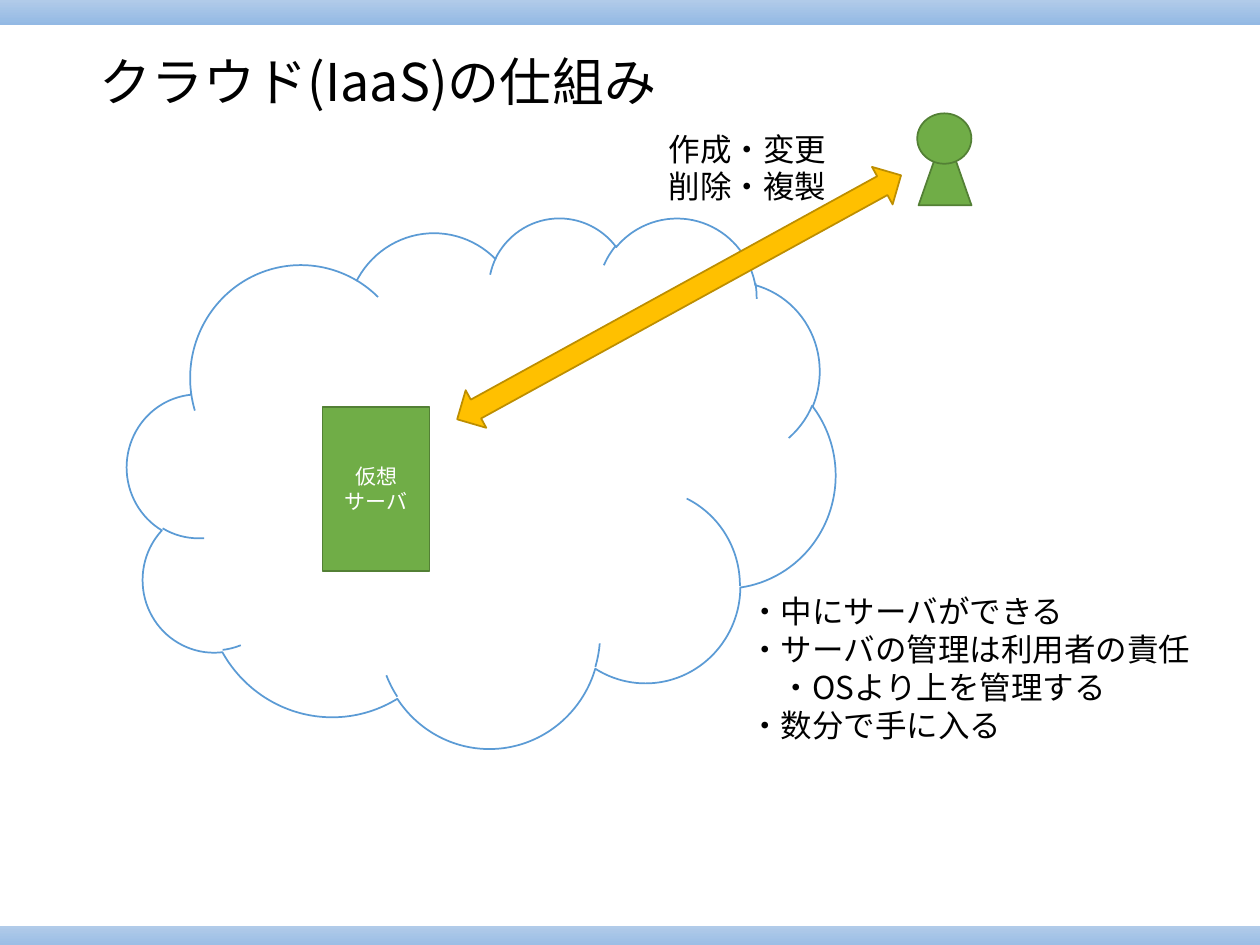
from lxml.etree import SubElement
from pptx import Presentation
from pptx.dml.color import RGBColor
from pptx.enum.shapes import MSO_SHAPE
from pptx.enum.text import MSO_ANCHOR, MSO_AUTO_SIZE, PP_ALIGN
from pptx.oxml.ns import qn
from pptx.util import Inches, Pt

FONT = "Noto Sans CJK JP"
BLACK = RGBColor(0x00, 0x00, 0x00)
WHITE = RGBColor(0xFF, 0xFF, 0xFF)
BLUE = RGBColor(0x5B, 0x9B, 0xD5)
GREEN = RGBColor(0x70, 0xAD, 0x47)
DARK_GREEN = RGBColor(0x53, 0x80, 0x35)
AMBER = RGBColor(0xFF, 0xC0, 0x00)
DARK_AMBER = RGBColor(0xBD, 0x8E, 0x00)
BAND_COLORS = (RGBColor(0xB1, 0xCB, 0xE9), RGBColor(0x93, 0xB9, 0xE4))


def inches(*lengths):
    return [Inches(length) for length in lengths]


def write_lines(frame, lines, size, color, **paragraph_format):
    """Put each line in its own paragraph, in the font for Latin and Japanese."""
    for index, line in enumerate(lines):
        para = frame.add_paragraph() if index else frame.paragraphs[0]
        for name, value in paragraph_format.items():
            setattr(para, name, value)
        span = para.add_run()
        span.text = line
        for name, value in {"name": FONT, "size": Pt(size)}.items():
            setattr(span.font, name, value)
        span.font.color.rgb = color
        SubElement(span.font._element, qn("a:ea"), typeface=FONT)


def add_band(page, top):
    band = page.shapes.add_shape(MSO_SHAPE.RECTANGLE, *inches(0, top, 10, 0.2))
    band.shadow.inherit = False
    band.line.fill.background()
    band.fill.gradient()
    band.fill.gradient_angle = 270
    for stop, color in zip(band.fill.gradient_stops, BAND_COLORS):
        stop.color.rgb = color


def set_title(page, text):
    title = page.shapes.title
    title.left, title.top, title.width, title.height = inches(0.69, 0.4, 8.62, 0.55)
    title.text_frame.vertical_anchor = MSO_ANCHOR.MIDDLE
    title.text_frame.auto_size = MSO_AUTO_SIZE.NONE
    write_lines(title.text_frame, [text], 29.7, BLACK,
                alignment=PP_ALIGN.LEFT, line_spacing=0.9)


def add_figure(page, kind, place, fill, line):
    figure = page.shapes.add_shape(kind, *inches(*place))
    figure.shadow.inherit = False
    figure.fill.solid()
    figure.fill.fore_color.rgb = fill
    figure.line.color.rgb = line
    figure.line.width = Pt(1)
    return figure


def add_label(page, place, lines):
    box = page.shapes.add_textbox(*inches(*place))
    frame = box.text_frame
    frame.word_wrap = False
    frame.auto_size = MSO_AUTO_SIZE.SHAPE_TO_FIT_TEXT
    write_lines(frame, lines, 18, BLACK)
    return box


def add_server(page):
    server = add_figure(page, MSO_SHAPE.RECTANGLE, (2.56, 3.23, 0.85, 1.3),
                        GREEN, DARK_GREEN)
    server.text_frame.vertical_anchor = MSO_ANCHOR.MIDDLE
    write_lines(server.text_frame, ["仮想", "サーバ"], 12, WHITE,
                alignment=PP_ALIGN.CENTER)


def add_user(page):
    add_figure(page, MSO_SHAPE.ISOSCELES_TRIANGLE, (7.29, 1.03, 0.42, 0.6),
               GREEN, DARK_GREEN)
    add_figure(page, MSO_SHAPE.OVAL, (7.28, 0.9, 0.43, 0.4), GREEN, DARK_GREEN)


def add_notes_on_cloud(page):
    box = add_label(page, (5.85, 4.65, 3.74, 1.31), [
        "・中にサーバができる",
        "・サーバの管理は利用者の責任",
        "・OSより上を管理する",
        "・数分で手に入る",
    ])
    sub_item = box.text_frame.paragraphs[2]
    sub_item._p.get_or_add_pPr().set("marL", str(Inches(0.25)))


def main():
    deck = Presentation()
    deck.slide_width, deck.slide_height = inches(10, 7.5)
    page = deck.slides.add_slide(deck.slide_layouts[5])

    for top in (7.35, 0):
        add_band(page, top)
    set_title(page, "クラウド(IaaS)の仕組み")
    add_figure(page, MSO_SHAPE.CLOUD, (1.01, 1.72, 5.62, 4.21), WHITE, BLUE)
    add_server(page)
    arrow = add_figure(page, MSO_SHAPE.LEFT_RIGHT_ARROW, (3.38, 2.19, 4.02, 0.34),
                       AMBER, DARK_AMBER)
    arrow.rotation = 331.2
    add_label(page, (5.21, 0.98, 1.46, 0.71), ["作成・変更", "削除・複製"])
    add_user(page)
    add_notes_on_cloud(page)

    deck.save("out.pptx")


if __name__ == "__main__":
    main()
